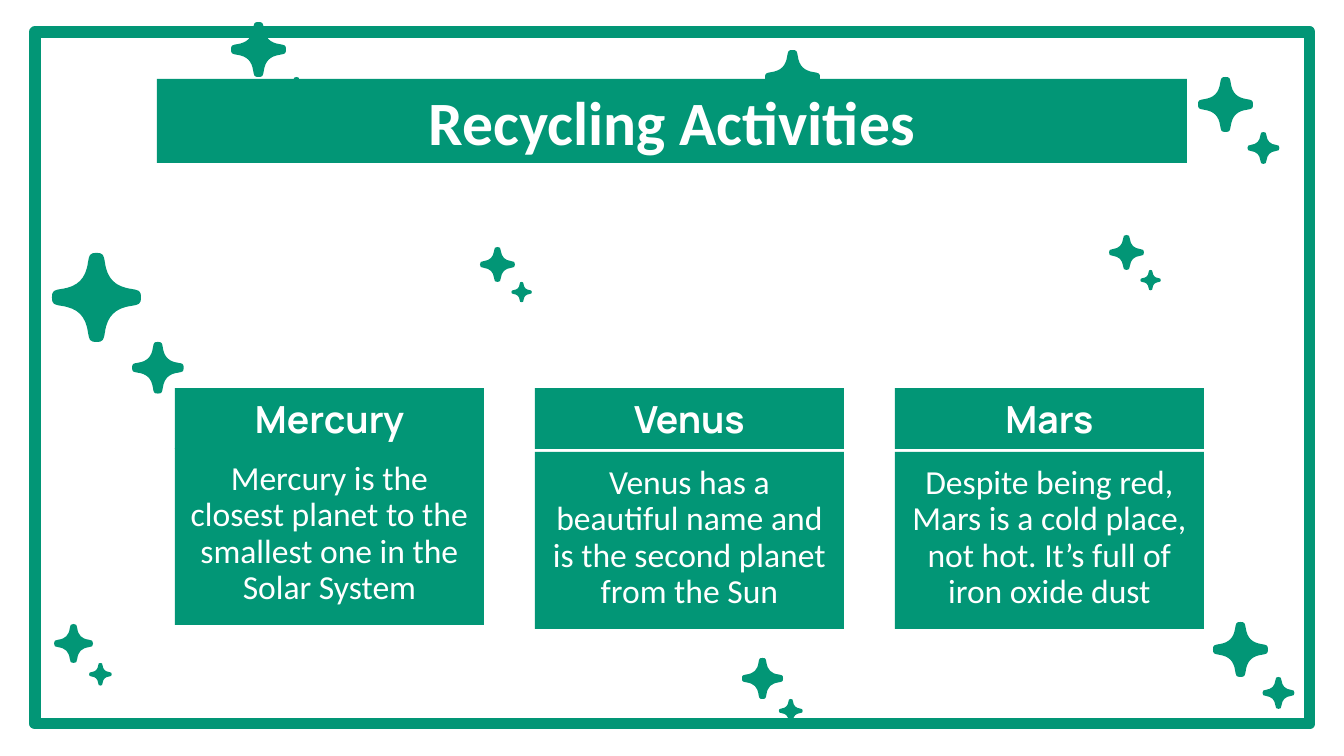
"""Build the Recycling Activities slide with three planet cards and sparkles."""
import lxml.etree
import pptx
import pptx.dml.color
import pptx.enum.shapes
import pptx.enum.text
import pptx.oxml.ns
import pptx.util

COLORS = {"green": "029676", "white": "FFFFFF"}
PX = 914400 / 134.4

TITLE = "Recycling Activities"
CARDS = [
    ("Mercury", "Mercury is the closest planet to the smallest one in the Solar System", 448),
    ("Venus", "Venus has a beautiful name and is the second planet from the Sun", 452),
    ("Mars", "Despite being red, Mars is a cold place, not hot. It’s full of iron oxide dust", 452),
]
CARD_LEFT, CARD_STEP, CARD_WIDTH = 175, 360, 309
HEADING_TOP, HEADING_HEIGHT, BODY_HEIGHT = 388, 61, 177

SPARKLE_PAIRS = [
    (1198, 77, 55), (480, 247, 35), (52, 253, 89), (54, 624, 39),
    (231, 22, 55), (742, 658, 41), (1213, 622, 55), (1109, 235, 35),
]
SINGLE_SPARKLE = (765, 50, 55)
SPARKLE_START = (1, 0)
SPARKLE_QUARTER = [
    (1, 0.16), (0.95, 0.16), (0.79, 0.19),
    (0.42, 0.24), (0.24, 0.42), (0.19, 0.79),
    (0.16, 0.95), (0.16, 1), (0, 1),
]


def emu(pixels):
    return pptx.util.Emu(round(pixels * PX))


def color(name):
    return pptx.dml.color.RGBColor.from_string(COLORS[name])


def sparkle_outline():
    outline, quarter = [SPARKLE_START], SPARKLE_QUARTER
    for _ in range(4):
        outline += quarter
        quarter = [(-y, x) for x, y in quarter]
    return outline


def paint(shape):
    shape.shadow.inherit = False
    shape.fill.solid()
    shape.fill.fore_color.rgb = color("green")
    shape.line.fill.background()


def bend_lines(shape):
    """Turn every three straight segments into one cubic curve."""
    lines = list(shape.element.iter(pptx.oxml.ns.qn("a:lnTo")))
    for index in range(0, len(lines), 3):
        curve = lxml.etree.Element(pptx.oxml.ns.qn("a:cubicBezTo"))
        lines[index].addprevious(curve)
        for line in lines[index:index + 3]:
            curve.append(line[0])
            line.getparent().remove(line)


def add_sparkle(slide, left, top, size):
    radius = size / 2
    points = [(emu(left + radius * (1 + x)), emu(top + radius * (1 + y)))
              for x, y in sparkle_outline()]
    builder = slide.shapes.build_freeform(*points[0])
    builder.add_line_segments(points[1:], close=True)
    shape = builder.convert_to_shape()
    bend_lines(shape)
    paint(shape)


def add_rectangle(slide, left, top, width, height):
    return slide.shapes.add_shape(
        pptx.enum.shapes.MSO_SHAPE.RECTANGLE, emu(left), emu(top), emu(width), emu(height))


def add_text_block(slide, box, text, font_name, size, bold=False, space_after=0):
    shape = add_rectangle(slide, *box)
    paint(shape)
    frame = shape.text_frame
    frame.word_wrap = True
    frame.vertical_anchor = pptx.enum.text.MSO_ANCHOR.TOP
    frame.margin_left = frame.margin_right = pptx.util.Inches(0.1)
    frame.margin_top = frame.margin_bottom = pptx.util.Inches(0.1)
    paragraph = frame.paragraphs[0]
    paragraph.alignment = pptx.enum.text.PP_ALIGN.CENTER
    paragraph.line_spacing = 0.9
    paragraph.space_after = pptx.util.Pt(space_after)
    run = paragraph.add_run()
    run.text = text
    run.font.name = font_name
    run.font.size = pptx.util.Pt(size)
    run.font.bold = bold
    run.font.color.rgb = color("white")


def main():
    presentation = pptx.Presentation()
    presentation.slide_width, presentation.slide_height = emu(1344), emu(756)
    slide = presentation.slides.add_slide(presentation.slide_layouts[6])
    slide.background.fill.solid()
    slide.background.fill.fore_color.rgb = color("white")

    for left, top, size in SPARKLE_PAIRS:
        add_sparkle(slide, left, top, size)
        add_sparkle(slide, left + 0.9 * size, top + size, 0.58 * size)
    add_sparkle(slide, *SINGLE_SPARKLE)

    add_text_block(slide, (157, 79, 1030, 84), TITLE, "Calibri", 33, bold=True)
    for index, (heading, body, body_top) in enumerate(CARDS):
        left = CARD_LEFT + index * CARD_STEP
        add_text_block(slide, (left, body_top, CARD_WIDTH, BODY_HEIGHT),
                       body, "Calibri", 18, space_after=12)
        add_text_block(slide, (left, HEADING_TOP, CARD_WIDTH, HEADING_HEIGHT),
                       heading, "Manrope", 20, bold=True, space_after=12)

    border = add_rectangle(slide, 35, 32, 1275, 692)
    border.shadow.inherit = False
    border.fill.background()
    border.line.color.rgb = color("green")
    border.line.width = pptx.util.Pt(6)
    presentation.save("out.pptx")


if __name__ == "__main__":
    main()
